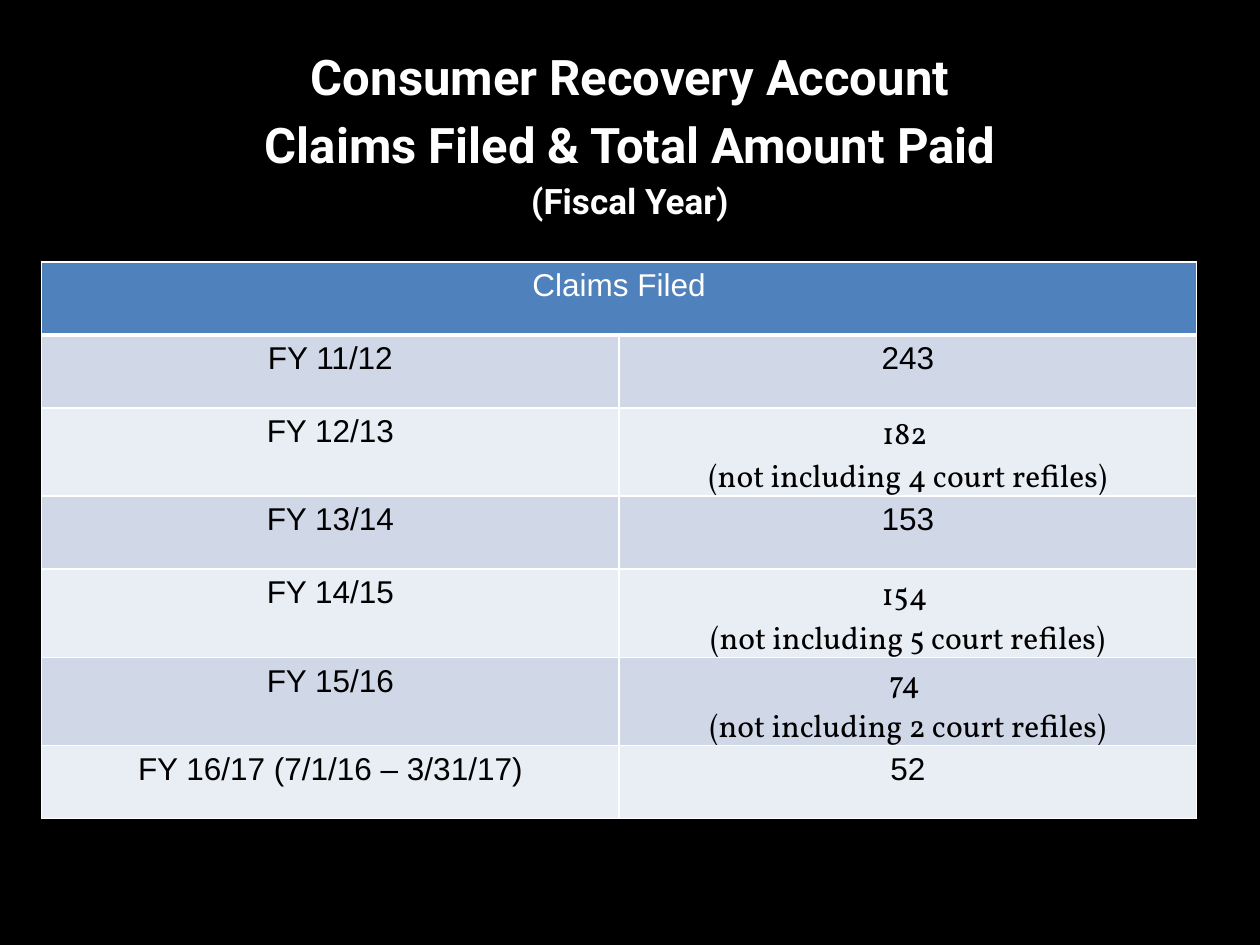
import copy

import lxml.etree
import pptx
import pptx.dml.color
import pptx.enum.text
import pptx.oxml.ns
import pptx.util

Cm = pptx.util.Cm
Pt = pptx.util.Pt
RGBColor = pptx.dml.color.RGBColor
qn = pptx.oxml.ns.qn

BLACK = RGBColor(0x00, 0x00, 0x00)
WHITE = RGBColor(0xFF, 0xFF, 0xFF)
BLUE = RGBColor(0x4F, 0x81, 0xBD)
BAND_DARK = RGBColor(0xD0, 0xD8, 0xE8)
BAND_LIGHT = RGBColor(0xE9, 0xED, 0xF4)

TITLE = [
    ("Consumer Recovery Account", 28),
    ("Claims Filed & Total Amount Paid", 28),
    ("(Fiscal Year)", 20),
]
CLAIMS = [
    ("FY 11/12", ["243"]),
    ("FY 12/13", ["182 ", "(not including 4 court refiles)"]),
    ("FY 13/14", ["153"]),
    ("FY 14/15", ["154 ", "(not including 5 court refiles)"]),
    ("FY 15/16", ["74 ", "(not including 2 court refiles)"]),
    ("FY 16/17 (7/1/16 – 3/31/17)", ["52"]),
]


def add_text(p, text, size=18, font="Arial", color=BLACK, bold=False):
    p.alignment = pptx.enum.text.PP_ALIGN.CENTER
    r = p.add_run()
    r.text = text
    r.font.size = Pt(size)
    r.font.name = font
    r.font.color.rgb = color
    r.font.bold = bold
    return r


def add_title(s):
    sp = s.shapes.title
    sp.left, sp.top, sp.width, sp.height = Cm(1.27), Cm(0.64), Cm(22.86), Cm(3.94)
    tf = sp.text_frame
    tf.word_wrap = True
    tf.auto_size = pptx.enum.text.MSO_AUTO_SIZE.SHAPE_TO_FIT_TEXT
    tf.vertical_anchor = pptx.enum.text.MSO_ANCHOR.MIDDLE
    p = tf.paragraphs[0]
    p.line_spacing = 1.15
    p.space_after = Pt(10)
    for i, (line, size) in enumerate(TITLE):
        if i:
            p.add_line_break()
            p._p.findall(qn("a:br"))[-1].append(copy.deepcopy(r._r.rPr))
        r = add_text(p, line, size=size, font="Roboto", color=WHITE, bold=True)


def set_borders(cell, bottom=1):
    tc_pr = cell._tc.get_or_add_tcPr()
    for side, width in (("L", 1), ("R", 1), ("T", 1), ("B", bottom)):
        ln = lxml.etree.SubElement(tc_pr, qn(f"a:ln{side}"), w=str(Pt(width)))
        fill = lxml.etree.SubElement(ln, qn("a:solidFill"))
        lxml.etree.SubElement(fill, qn("a:srgbClr"), val=str(WHITE))


def fill_cell(cell, lines, fill, bottom=1, **fmt):
    set_borders(cell, bottom)
    cell.fill.solid()
    cell.fill.fore_color.rgb = fill
    tf = cell.text_frame
    for i, line in enumerate(lines):
        p = tf.add_paragraph() if i else tf.paragraphs[0]
        add_text(p, line, **fmt)


def add_claims_table(s):
    table = s.shapes.add_table(
        len(CLAIMS) + 1, 2, Cm(0.84), Cm(5.28), Cm(23.28), Cm(11.25)
    ).table
    for row in table.rows:
        row.height = Cm(1.47)
    for cell in table.rows[0].cells:
        set_borders(cell, bottom=3) if cell.is_spanned else None
    head = table.cell(0, 0)
    head.merge(table.cell(0, 1))
    fill_cell(head, ["Claims Filed"], BLUE, bottom=3, color=WHITE)
    for i, (year, lines) in enumerate(CLAIMS, 1):
        fill = BAND_DARK if i % 2 else BAND_LIGHT
        refiled = len(lines) > 1
        if refiled:
            table.rows[i].height = Cm(1.78)
        fill_cell(table.cell(i, 0), [year], fill)
        fill_cell(table.cell(i, 1), lines, fill, font="Vollkorn" if refiled else "Arial")


def main():
    prs = pptx.Presentation()
    prs.slide_width, prs.slide_height = Cm(25.4), Cm(19.05)
    s = prs.slides.add_slide(prs.slide_layouts[5])
    s.background.fill.solid()
    s.background.fill.fore_color.rgb = BLACK
    add_claims_table(s)
    add_title(s)
    prs.save("out.pptx")


if __name__ == "__main__":
    main()
